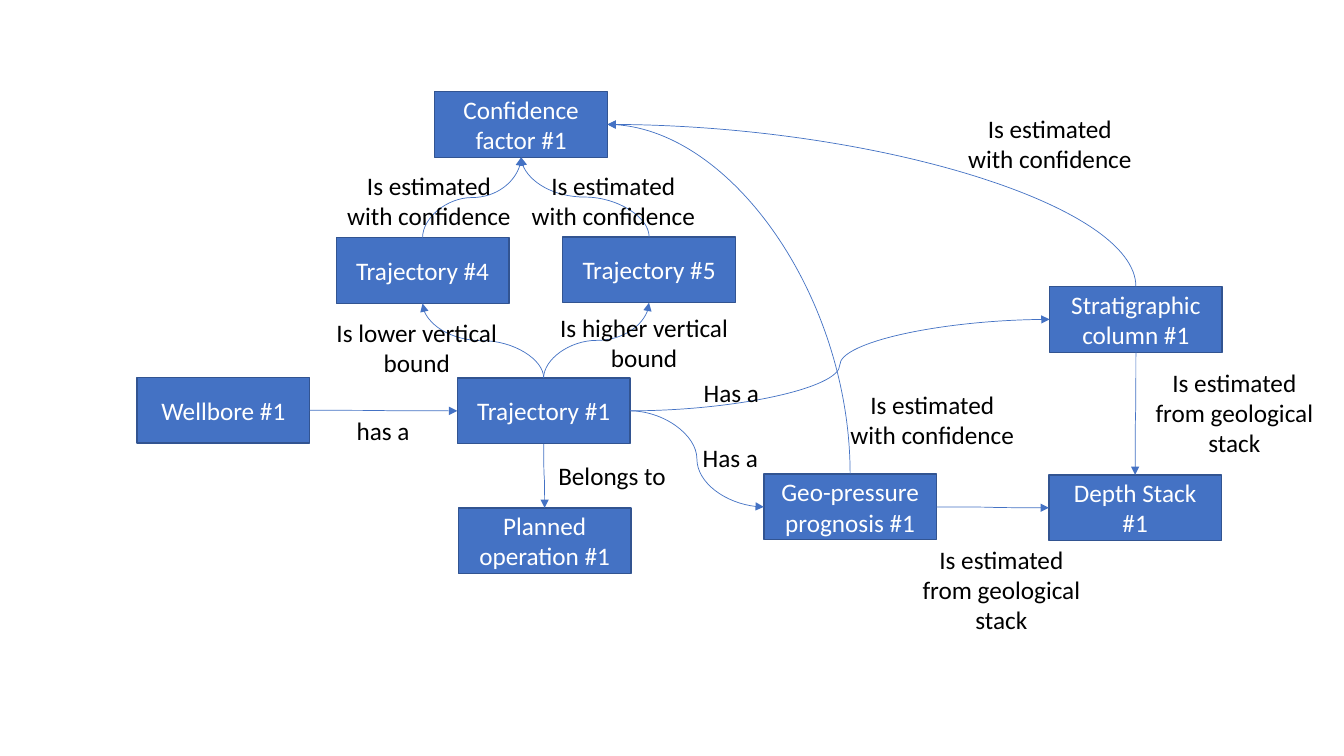
from lxml.etree import SubElement
from pptx import Presentation
from pptx.dml.color import RGBColor
from pptx.enum.shapes import MSO_CONNECTOR, MSO_SHAPE
from pptx.enum.text import MSO_ANCHOR, MSO_AUTO_SIZE, PP_ALIGN
from pptx.oxml.ns import qn
from pptx.util import Pt

FONT = "Calibri"
BLUE, EDGE, WHITE, BLACK = "4472C4", "325491", "FFFFFF", "000000"
BOX_W, BOX_H = 123.3, 47
TOP, LEFT, BOTTOM, RIGHT = range(4)

BOXES = {
    "Wellbore #1": (97.9, 269.6),
    "Trajectory #1": (326.7, 270),
    "Planned operation #1": (327.4, 362.8),
    "Trajectory #4": (240.2, 169.8),
    "Trajectory #5": (402, 169.2),
    "Confidence factor #1": (310.6, 65.4),
    "Stratigraphic column #1": (749.7, 204.7),
    "Depth Stack #1": (749.2, 339.2),
    "Geo-pressure prognosis #1": (545.6, 338.6),
}

LINKS = [
    ("Wellbore #1", RIGHT, "Trajectory #1", LEFT),
    ("Trajectory #1", BOTTOM, "Planned operation #1", TOP),
    ("Trajectory #1", TOP, "Trajectory #4", BOTTOM),
    ("Trajectory #1", TOP, "Trajectory #5", BOTTOM),
    ("Trajectory #4", TOP, "Confidence factor #1", BOTTOM),
    ("Trajectory #5", TOP, "Confidence factor #1", BOTTOM),
    ("Trajectory #1", RIGHT, "Stratigraphic column #1", LEFT),
    ("Trajectory #1", RIGHT, "Geo-pressure prognosis #1", LEFT),
    ("Stratigraphic column #1", TOP, "Confidence factor #1", RIGHT),
    ("Geo-pressure prognosis #1", TOP, "Confidence factor #1", RIGHT),
    ("Stratigraphic column #1", BOTTOM, "Depth Stack #1", TOP),
    ("Geo-pressure prognosis #1", RIGHT, "Depth Stack #1", LEFT),
]

CONFIDENCE = "Is estimated with confidence"
STACK = "Is estimated from geological stack"
LABELS = [
    ("Is lower vertical bound", 231.8, 223.2, 131.8, 50.9),
    ("Is higher vertical bound", 388.1, 219.6, 144, 50.9),
    (CONFIDENCE, 240.5, 118.1, 131.8, 50.9),
    (CONFIDENCE, 372.2, 118.1, 131.8, 50.9),
    (CONFIDENCE, 684, 77.4, 131.8, 50.9),
    (CONFIDENCE, 600, 274.3, 131.8, 50.9),
    (STACK, 649.4, 385.2, 131.8, 72.7),
    (STACK, 815.8, 258.5, 131.8, 72.7),
    ("Has a", 482.4, 265.7, 79.9, 29.1),
    ("Has a", 481.7, 312.5, 79.9, 29.1),
]
SHORT_LABELS = [
    ("Belongs to", 391.7, 325.4, 92.2, 29.1),
    ("has a", 247.7, 293, 54.7, 29.1),
]


def rgb(value):
    """Turn a hex string into a colour."""
    return RGBColor.from_string(value)


def write(tf, text, color, align):
    """Fill a text frame with one formatted paragraph."""
    tf.text = text
    p = tf.paragraphs[0]
    p.alignment = align
    r = p.runs[0]
    r.font.name, r.font.size = FONT, Pt(18)
    r.font.color.rgb = rgb(color)


def add_box(s, text, x, y):
    """Add a blue entity box."""
    sp = s.shapes.add_shape(MSO_SHAPE.RECTANGLE, Pt(x), Pt(y), Pt(BOX_W), Pt(BOX_H))
    sp.shadow.inherit = False
    sp.fill.solid()
    sp.fill.fore_color.rgb = rgb(BLUE)
    sp.line.color.rgb = rgb(EDGE)
    sp.line.width = Pt(1)
    sp.text_frame.vertical_anchor = MSO_ANCHOR.MIDDLE
    sp.text_frame.word_wrap = True
    write(sp.text_frame, text, WHITE, PP_ALIGN.CENTER)
    return sp


def add_label(s, text, x, y, w, h, wrap=True, align=PP_ALIGN.CENTER):
    """Add a relation label."""
    tf = s.shapes.add_textbox(Pt(x), Pt(y), Pt(w), Pt(h)).text_frame
    tf.word_wrap = wrap
    tf.auto_size = MSO_AUTO_SIZE.SHAPE_TO_FIT_TEXT
    write(tf, text, BLACK, align)


def turn_upright(cxn):
    """Rotate a curve so that it leaves its start vertically."""
    dx, dy = cxn.end_x - cxn.begin_x, cxn.end_y - cxn.begin_y
    mid_x, mid_y = cxn.begin_x + dx // 2, cxn.begin_y + dy // 2
    cxn.width, cxn.height = abs(dy), abs(dx)
    cxn.left, cxn.top = mid_x - abs(dy) // 2, mid_y - abs(dx) // 2
    xfrm = cxn.element.spPr.find(qn("a:xfrm"))
    xfrm.set("rot", str((90 if dy > 0 else 270) * 60000))
    xfrm.set("flipH", "0")
    xfrm.set("flipV", "1" if (dx > 0) == (dy > 0) else "0")


def add_link(s, start, start_side, end, end_side):
    """Join two boxes with a curved arrow."""
    cxn = s.shapes.add_connector(MSO_CONNECTOR.CURVE, Pt(0), Pt(0), Pt(0), Pt(0))
    cxn.begin_connect(start, start_side)
    cxn.end_connect(end, end_side)
    cxn.line.color.rgb = rgb(BLUE)
    cxn.line.width = Pt(0.5)
    spPr = cxn.element.spPr
    SubElement(spPr.find(qn("a:ln")), qn("a:tailEnd"), type="triangle")
    SubElement(spPr, qn("a:effectLst"))
    if start_side in (TOP, BOTTOM):
        turn_upright(cxn)
        if end_side in (LEFT, RIGHT):
            spPr.find(qn("a:prstGeom")).set("prst", "curvedConnector2")


def main():
    """Build the entity relation slide."""
    prs = Presentation()
    prs.slide_width, prs.slide_height = Pt(960), Pt(540)
    s = prs.slides.add_slide(prs.slide_layouts[6])
    boxes = {name: add_box(s, name, x, y) for name, (x, y) in BOXES.items()}
    for start, start_side, end, end_side in LINKS:
        add_link(s, boxes[start], start_side, boxes[end], end_side)
    for label in LABELS:
        add_label(s, *label)
    for label in SHORT_LABELS:
        add_label(s, *label, wrap=False, align=PP_ALIGN.LEFT)
    prs.save("out.pptx")


if __name__ == "__main__":
    main()
